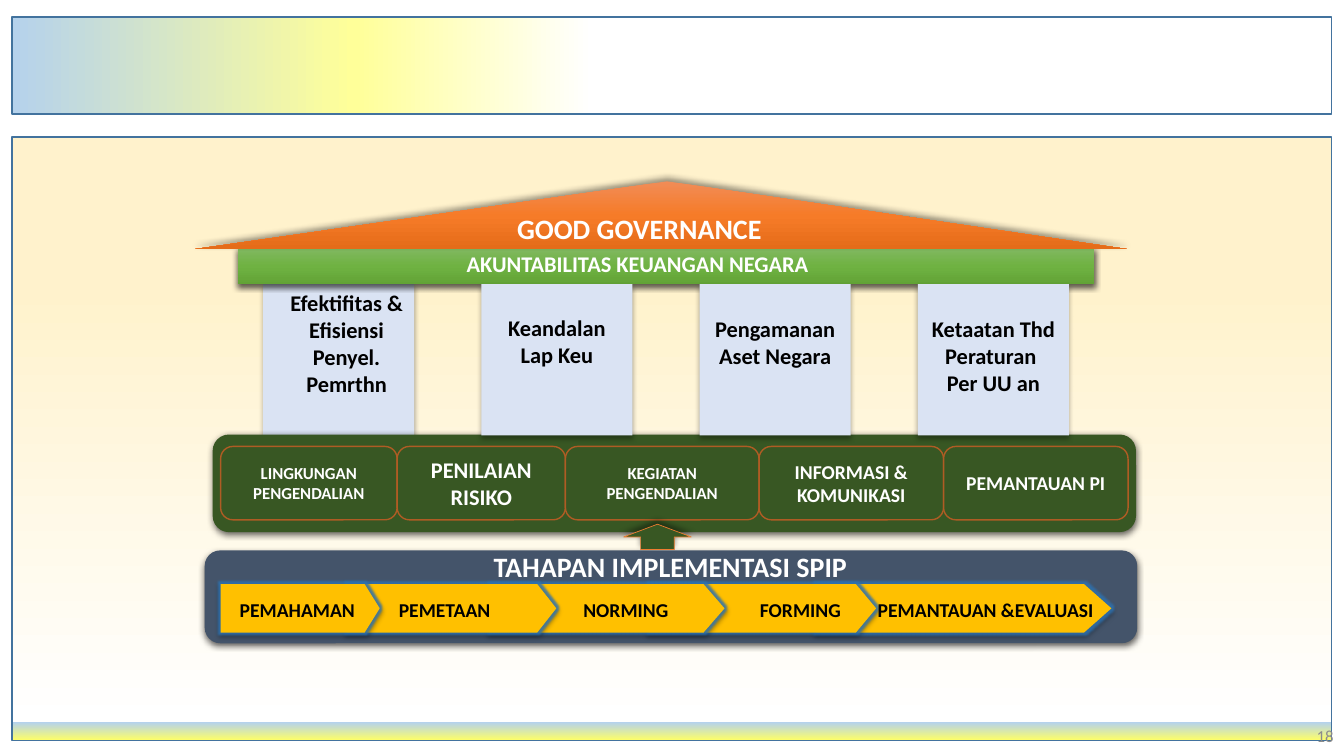
import pptx
import pptx.util
import pptx.dml.color
import pptx.enum.shapes
import pptx.enum.text
import pptx.oxml
import pptx.oxml.ns
import lxml.etree

Cm, Pt = pptx.util.Cm, pptx.util.Pt
KIND = pptx.enum.shapes.MSO_SHAPE
ALIGN = pptx.enum.text.PP_ALIGN
MID = pptx.enum.text.MSO_ANCHOR.MIDDLE
qn = pptx.oxml.ns.qn

GREEN, NAVY, GOLD, PALE = "385723", "44546A", "FFC000", "DAE3F3"
WHITE, BLACK, GRAY, EDGE = "FFFFFF", "000000", "8C8C8C", "43739E"
DEEP, SOFT, FAINT, UP = (63, 4.5, 1.5, 90), (35, 3.1, 1.8, 90), (32, 3.5, 2.2, 90), (40, 4, 3, 270)

PANELS = [
    ((0.3, 3.45, 33.25, 15.21), 90,
     [(25, "FFF2CC"), (97, WHITE), (97, "B5D2EC"), (100, "FFFF66")]),
    ((0.3, 0.43, 33.25, 2.44), 0,
     [(0, "B5D2EC"), (26, "FFFF99"), (44, WHITE), (86, WHITE)]),
]
BEAM = [(0, "81B861"), (50, "6FB242"), (100, "62A336")]
ROOF = [(0, "F18C57"), (50, "F67B28"), (100, "E56C19")]
PEAK = [(4.9, 6.28), (28.42, 6.28), (16.81, 4.57)]

PILLARS = [
    (["Efektifitas & Efisiensi Penyel. Pemrthn"], 0.2, 7.16, 3.38),
    (["Keandalan Lap Keu"], 0, 7.8, 3.38),
    (["Pengamanan Aset Negara"], 0, 7.82, 4.24),
    (["Ketaatan Thd Peraturan ", "Per UU an"], 0, 7.82, 4.24),
]
ROOMS = [
    ("LINGKUNGAN PENGENDALIAN", 4.45, 12),
    ("PENILAIAN RISIKO", 4.24, 16),
    ("KEGIATAN PENGENDALIAN", 4.88, 12),
    ("INFORMASI & KOMUNIKASI", 4.65, 14),
    ("PEMANTAUAN PI", 4.65, 14),
]
STEPS = [
    ("PEMAHAMAN", 5.56, 4.01, 0.38, 5.79, 4.01),
    ("PEMETAAN", 8.74, 5.28, 0.48, 9.8, 3.89),
    ("NORMING", 12.34, 5.92, 0.53, 14.45, 3.61),
    ("FORMING", 16.36, 5.72, 0.51, 18.9, 3.61),
    ("PEMANTAUAN &EVALUASI", 20.57, 7.44, 0.69, 21.87, 6.55),
]
LABELS = [
    ("GOOD GOVERNANCE", (12.78, 5.21, 7.5, 1.12), 20, ALIGN.LEFT),
    ("AKUNTABILITAS KEUANGAN NEGARA", (11.51, 6.17, 11.07, 0.94), 16, ALIGN.LEFT),
    ("TAHAPAN IMPLEMENTASI SPIP", (7.47, 13.72, 18.85, 1.09), 20, ALIGN.CENTER),
]
LEFT, GAP, TOP, SIDE = 6.63, 5.5, 7.16, 3.81

deck = pptx.Presentation()
deck.slide_width, deck.slide_height = Cm(33.87), Cm(19.05)
slide = deck.slides.add_slide(deck.slide_layouts[6])
shapes = slide.shapes


def tint(code):
    return pptx.dml.color.RGBColor.from_string(code)


def node(root, tag, **attrs):
    return lxml.etree.SubElement(root, qn(tag), {k: str(v) for k, v in attrs.items()})


def blend(shape, stops, angle):
    shape.fill.gradient()
    grad = shape._element.spPr.find(qn("a:gradFill"))
    for child in list(grad):
        grad.remove(child)
    items = node(grad, "a:gsLst")
    for pos, code in stops:
        node(node(items, "a:gs", pos=pos * 1000), "a:srgbClr", val=code)
    node(grad, "a:lin", ang=angle * 60000, scaled=0)


def paint(shape, fill, line=None, width=1, shade=None, glow=None, angle=90):
    if isinstance(fill, str):
        shape.fill.solid()
        shape.fill.fore_color.rgb = tint(fill)
    else:
        blend(shape, fill, angle)
    if line:
        shape.line.color.rgb = tint(line)
        shape.line.width = Pt(width)
    else:
        shape.line.fill.background()
    shape.shadow.inherit = False
    fx = shape._element.spPr.find(qn("a:effectLst"))
    if glow:
        halo = node(node(fx, "a:glow", rad=Pt(3)), "a:srgbClr", val=glow)
        node(halo, "a:alpha", val=80000)
    if shade:
        alpha, blur, dist, way = shade
        cast = node(fx, "a:outerShdw", blurRad=Pt(blur), dist=Pt(dist),
                    dir=way * 60000, rotWithShape=0)
        node(node(cast, "a:srgbClr", val=BLACK), "a:alpha", val=alpha * 1000)


def block(kind, box, fill, adj=None, **look):
    shape = shapes.add_shape(kind, *map(Cm, box))
    if adj is not None:
        shape.adjustments[0] = adj
    paint(shape, fill, **look)
    return shape


def write(shape, lines, size, color, align=ALIGN.CENTER, bold=True):
    frame = shape.text_frame
    frame.word_wrap = True
    for i, line in enumerate(lines):
        para = frame.add_paragraph() if i else frame.paragraphs[0]
        para.alignment = align
        run = para.add_run()
        run.text = line
        run.font.name = "Calibri"
        run.font.size = Pt(size)
        run.font.bold = bold
        run.font.color.rgb = tint(color)
    return frame


def label(box, *args, **more):
    return write(shapes.add_textbox(*map(Cm, box)), *args, **more)


def pillar(i):
    block(KIND.RECTANGLE, (LEFT + GAP * i, TOP, SIDE, SIDE), PALE, shade=FAINT)


for box, angle, stops in PANELS:
    block(KIND.ROUNDED_RECTANGLE, box, stops, adj=0, line=EDGE, angle=angle)
label((26.24, 18.03, 7.62, 1.02), ["18"], 12, GRAY, ALIGN.RIGHT, bold=False).vertical_anchor = MID

pillar(0)
block(KIND.ROUNDED_RECTANGLE, (5.36, 10.95, 23.27, 2.46), GREEN, shade=DEEP)
block(KIND.ROUNDED_RECTANGLE, (5.16, 13.87, 23.5, 2.34), NAVY, shade=DEEP)
block(KIND.RECTANGLE, (5.99, 6.25, 21.59, 0.91), BEAM, shade=DEEP)

high = 1.22
for name, left, wide, tip, *rest in reversed(STEPS):
    block(KIND.PENTAGON, (left, 14.72, wide, high), GOLD, adj=tip / high,
          shade=SOFT, glow="2E75B6")

start, *others = [(Cm(x), Cm(y)) for x, y in PEAK]
path = shapes.build_freeform(*start)
path.add_line_segments(others, close=True)
paint(path.convert_to_shape(), ROOF, shade=UP)

for name, *rest, left, wide in STEPS:
    label((left, 14.94, wide, 0.85), [name], 14, BLACK, ALIGN.LEFT)

edge = 5.56
for name, wide, size in ROOMS:
    room = block(KIND.ROUNDED_RECTANGLE, (edge, 11.25, wide, 1.85), GREEN, line="AF5C24")
    write(room, [name], size, WHITE).vertical_anchor = MID
    edge += wide

block(KIND.UP_ARROW, (15.72, 13.21, 1.7, 0.64), GREEN, line="ED7D31", width=0.5, shade=UP)
for name, box, size, align in LABELS:
    label(box, [name], size, WHITE, align)

for i in range(1, len(PILLARS)):
    pillar(i)
for i, (lines, shift, top, wide) in enumerate(PILLARS):
    mid = LEFT + GAP * i + SIDE / 2 + shift
    label((mid - wide / 2, top, wide, 0.81 * (len(lines) + 1)), lines, 16, BLACK)

deck.save("out.pptx")
